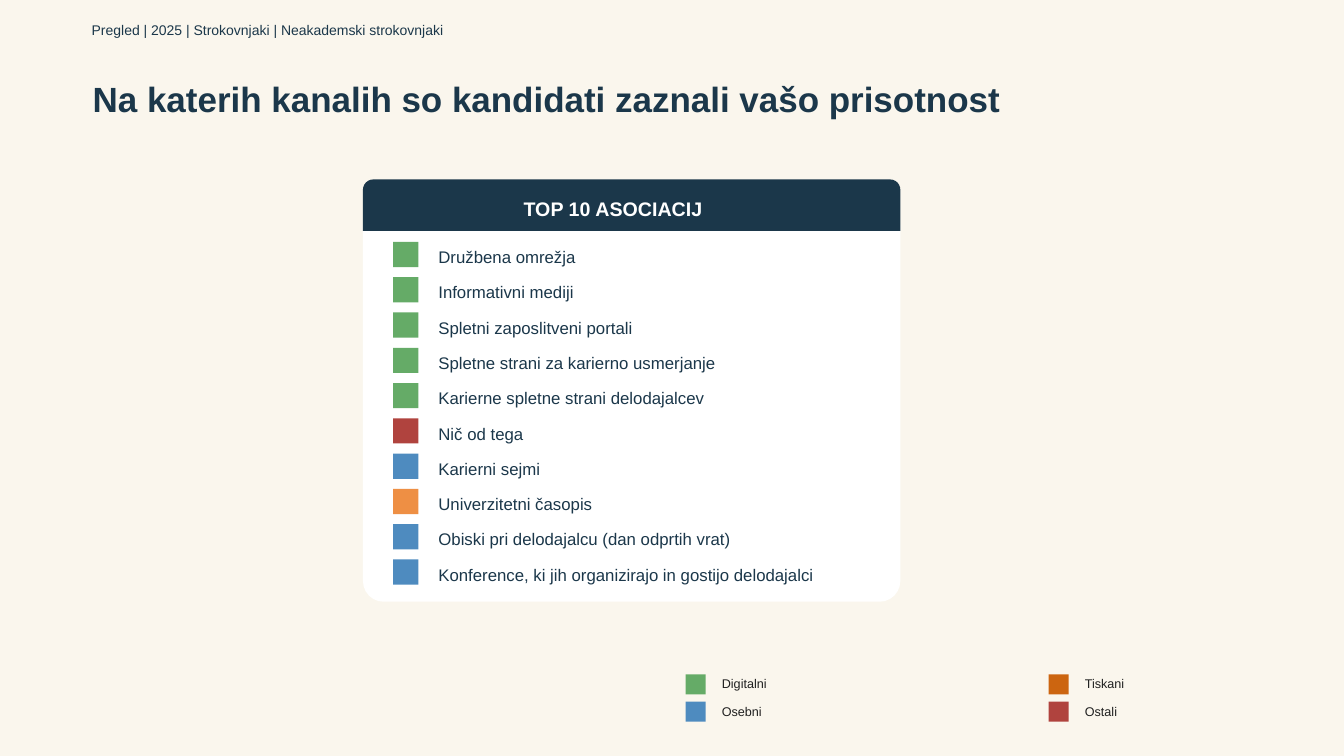
from dataclasses import dataclass

from pptx import Presentation
from pptx.dml.color import RGBColor
from pptx.enum.shapes import MSO_SHAPE as SHAPE
from pptx.enum.text import MSO_ANCHOR as ANCHOR, MSO_AUTO_SIZE as FIT, PP_ALIGN as ALIGN
from pptx.util import Inches, Pt

COLORS = {
    "background": "FAF6ED",
    "navy": "1B374A",
    "white": "FFFFFF",
    "legend_text": "202020",
    "digital": "65AB67",
    "personal": "4E8BBF",
    "print": "EE8F44",
    "print_legend": "CC6510",
    "other": "B0433E",
}
FONT = "Arial"
ROW_TOP, ROW_STEP = 2.4, 0.35
LEGEND_LEFT, LEGEND_TOP = 6.8, 6.69
LEGEND_COL_STEP, LEGEND_ROW_STEP = 3.6, 0.27


@dataclass
class Channel:
    label: str
    color: str


@dataclass
class LegendEntry:
    label: str
    color: str
    col: int
    row: int


CHANNELS = [
    Channel("Družbena omrežja", "digital"),
    Channel("Informativni mediji", "digital"),
    Channel("Spletni zaposlitveni portali", "digital"),
    Channel("Spletne strani za karierno usmerjanje", "digital"),
    Channel("Karierne spletne strani delodajalcev", "digital"),
    Channel("Nič od tega", "other"),
    Channel("Karierni sejmi", "personal"),
    Channel("Univerzitetni časopis", "print"),
    Channel("Obiski pri delodajalcu (dan odprtih vrat)", "personal"),
    Channel("Konference, ki jih organizirajo in gostijo delodajalci", "personal"),
]
LEGEND = [
    LegendEntry("Digitalni", "digital", 0, 0),
    LegendEntry("Tiskani", "print_legend", 1, 0),
    LegendEntry("Osebni", "personal", 0, 1),
    LegendEntry("Ostali", "other", 1, 1),
]


def rgb(name: str) -> RGBColor:
    return RGBColor.from_string(COLORS[name])


def add_text(s, text: str, x: float, y: float, w: float, h: float, *, size: float,
             color: str = "navy", bold: bool = False, align=ALIGN.LEFT,
             anchor=ANCHOR.TOP, insets: tuple = (0.1, 0.05, 0.1, 0.05),
             wrap: bool = True, grow: bool = False, spacing: float = 1.0) -> None:
    sp = s.shapes.add_textbox(Inches(x), Inches(y), Inches(w), Inches(h))
    tf = sp.text_frame
    tf.word_wrap = wrap
    tf.auto_size = FIT.SHAPE_TO_FIT_TEXT if grow else FIT.NONE
    tf.vertical_anchor = anchor
    tf.margin_left, tf.margin_top, tf.margin_right, tf.margin_bottom = map(Inches, insets)
    p = tf.paragraphs[0]
    p.alignment = align
    p.line_spacing = spacing
    r = p.add_run()
    r.text = text
    r.font.name = FONT
    r.font.size = Pt(size)
    r.font.bold = bold
    r.font.color.rgb = rgb(color)


def add_block(s, x: float, y: float, w: float, h: float, color: str,
              kind=SHAPE.RECTANGLE, adjust: tuple = ()) -> None:
    sp = s.shapes.add_shape(kind, Inches(x), Inches(y), Inches(w), Inches(h))
    sp.shadow.inherit = False
    sp.fill.solid()
    sp.fill.fore_color.rgb = rgb(color)
    sp.line.fill.background()
    for i, value in enumerate(adjust):
        sp.adjustments[i] = value


def add_heading(s) -> None:
    add_text(s, "Na katerih kanalih so kandidati zaznali vašo prisotnost",
             0.92, 0.61, 11.5, 0.79, size=25, bold=True, anchor=ANCHOR.MIDDLE,
             insets=(0, 0, 0, 0), spacing=0.9)
    add_text(s, "Pregled | 2025 | Strokovnjaki | Neakademski strokovnjaki",
             0, 0, 13.33, 0.61, size=10, anchor=ANCHOR.MIDDLE,
             insets=(0.91, 0, 0, 0), spacing=0.9)


def add_card(s) -> None:
    add_block(s, 3.6, 2.23, 5.33, 3.74, "white", SHAPE.ROUND_2_SAME_RECTANGLE, (0, 0.055))
    add_block(s, 3.6, 1.78, 5.33, 0.51, "navy", SHAPE.ROUND_2_SAME_RECTANGLE, (0.2, 0))
    add_text(s, "TOP 10 ASOCIACIJ", 4.99, 1.9, 2.18, 0.34, size=14, color="white",
             bold=True, align=ALIGN.CENTER, grow=True)
    for i, channel in enumerate(CHANNELS):
        y = ROW_TOP + i * ROW_STEP
        add_block(s, 3.9, y, 0.25, 0.25, channel.color)
        add_text(s, channel.label, 4.25, y, 4, 0.25, size=12, wrap=False, grow=True)


def add_legend(s) -> None:
    for entry in LEGEND:
        x = LEGEND_LEFT + entry.col * LEGEND_COL_STEP
        y = LEGEND_TOP + entry.row * LEGEND_ROW_STEP
        add_block(s, x, y, 0.2, 0.2, entry.color)
        add_text(s, entry.label, x + 0.36, y + 0.02, 2.5, 0.15, size=9,
                 color="legend_text", anchor=ANCHOR.MIDDLE, insets=(0, 0, 0, 0), grow=True)


def main() -> None:
    prs = Presentation()
    prs.slide_width, prs.slide_height = Inches(13.33), Inches(7.5)
    s = prs.slides.add_slide(prs.slide_layouts[6])
    s.background.fill.solid()
    s.background.fill.fore_color.rgb = rgb("background")
    add_heading(s)
    add_card(s)
    add_legend(s)
    prs.save("out.pptx")


if __name__ == "__main__":
    main()
